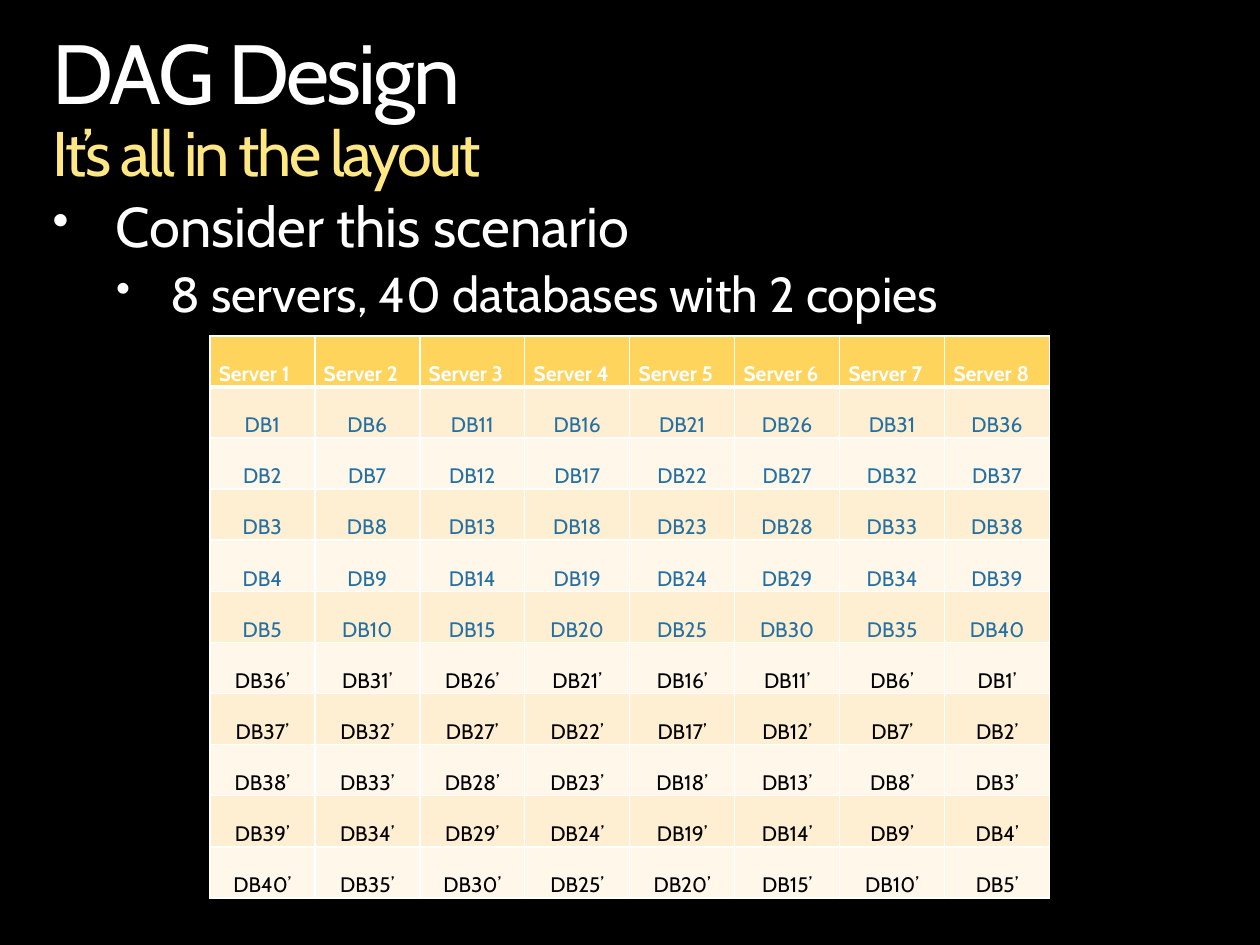
import pptx
import pptx.dml.color
import pptx.enum.text
import pptx.oxml.ns
import pptx.util
from lxml import etree

Cm = pptx.util.Cm
Pt = pptx.util.Pt
SERVERS = 8
DATABASES_PER_SERVER = 5


def colour(hex_value):
    return pptx.dml.color.RGBColor.from_string(hex_value)


def apply(target, formats):
    for name, value in formats.items():
        setattr(target, name, value)


def add_element(parent, tag, **attributes):
    return etree.SubElement(parent, pptx.oxml.ns.qn(tag), attributes)


class SlideWriter:
    """Holds the style and the current slide, and adds elements to it."""

    font_name = "Cabin"
    white, black, yellow, blue = "FFFFFF", "000000", "FFE784", "2570A3"
    header_fill = "FED45C"
    band_fills = ("FFEFD2", "FFF7EA")
    no_margins = dict.fromkeys(
        ("margin_left", "margin_top", "margin_right", "margin_bottom"), 0)

    def __init__(self, slide):
        self.slide = slide
        background = slide.background.fill
        background.solid()
        background.fore_color.rgb = colour(self.black)

    def run(self, paragraph, text, size, hex_value, bold=False):
        run = paragraph.add_run()
        run.text = text
        apply(run.font, {"name": self.font_name, "size": Pt(size), "bold": bold})
        run.font.color.rgb = colour(hex_value)
        return run

    def text_frame(self, left, top, width, height):
        frame = self.slide.shapes.add_textbox(
            Cm(left), Cm(top), Cm(width), Cm(height)).text_frame
        apply(frame, {"word_wrap": True, **self.no_margins})
        return frame

    def title(self, heading, subtitle, *box):
        paragraph = self.text_frame(*box).paragraphs[0]
        paragraph.line_spacing = 0.9
        heading_run = self.run(paragraph, heading, 48, self.white)
        paragraph.add_line_break()
        subtitle_run = self.run(paragraph, subtitle, 36, self.yellow)
        for run in (heading_run, subtitle_run):
            run._r.get_or_add_rPr().set("spc", "-150")

    def bullets(self, items, *box):
        frame = self.text_frame(*box)
        for level, (text, size, indent, hanging) in enumerate(items):
            paragraph = frame.add_paragraph() if level else frame.paragraphs[0]
            apply(paragraph, {"level": level, "line_spacing": 0.9,
                              "space_before": Pt(6 if level else 0)})
            properties = paragraph._p.get_or_add_pPr()
            properties.set("marL", str(Cm(indent)))
            properties.set("indent", str(-Cm(hanging)))
            add_element(properties, "a:buSzPct", val="85000")
            add_element(properties, "a:buChar", char="•")
            self.run(paragraph, text, size, self.white)

    def borders(self, cell, top, bottom):
        properties = cell._tc.get_or_add_tcPr()
        for side, width in (("L", 1), ("R", 1), ("T", top), ("B", bottom)):
            line = add_element(properties, f"a:ln{side}", w=str(Pt(width)))
            fill = add_element(line, "a:solidFill")
            add_element(fill, "a:srgbClr", val=self.white)

    def cell(self, cell, text, row):
        self.borders(cell, top=3 if row == 1 else 1, bottom=1 if row else 3)
        apply(cell, {**self.no_margins, "margin_left": Cm(0.18),
                     "margin_right": Cm(0.18),
                     "vertical_anchor": pptx.enum.text.MSO_ANCHOR.BOTTOM})
        cell.fill.solid()
        cell.fill.fore_color.rgb = colour(
            self.band_fills[(row - 1) % 2] if row else self.header_fill)
        paragraph = cell.text_frame.paragraphs[0]
        if row == 0:
            text_colour = self.white
        else:
            paragraph.alignment = pptx.enum.text.PP_ALIGN.CENTER
            text_colour = self.blue if row <= DATABASES_PER_SERVER else self.black
        self.run(paragraph, text, 12, text_colour, bold=row == 0)

    def table(self, rows, left, top, width, height):
        table = self.slide.shapes.add_table(
            len(rows), len(rows[0]), Cm(left), Cm(top), Cm(width), Cm(height)).table
        table.horz_banding = False
        for row, texts in enumerate(rows):
            for column, text in enumerate(texts):
                self.cell(table.cell(row, column), text, row)


def database_layout():
    def databases(servers, suffix=""):
        return [[f"DB{server * DATABASES_PER_SERVER + number}{suffix}"
                 for server in servers]
                for number in range(1, DATABASES_PER_SERVER + 1)]

    header = [f"Server {number}" for number in range(1, SERVERS + 1)]
    active = databases(range(SERVERS))
    copies = databases(reversed_servers, "’") if (
        reversed_servers := range(SERVERS - 1, -1, -1)) else []
    return [header, *active, *copies]


def main():
    deck = pptx.Presentation()
    apply(deck, {"slide_width": Cm(25.4), "slide_height": Cm(19.05)})
    writer = SlideWriter(deck.slides.add_slide(deck.slide_layouts[6]))
    writer.title("DAG Design", "It’s all in the layout", 1.06, 0.64, 23.28, 3.23)
    scenario = [("Consider this scenario", 32, 1.27, 1.27),
                ("8 servers, 40 databases with 2 copies", 28, 2.38, 1.1)]
    writer.bullets(scenario, 1.06, 4.02, 23.28, 2.54)
    writer.table(database_layout(), 4.23, 6.77, 16.93, 11.34)
    deck.save("out.pptx")


if __name__ == "__main__":
    main()
